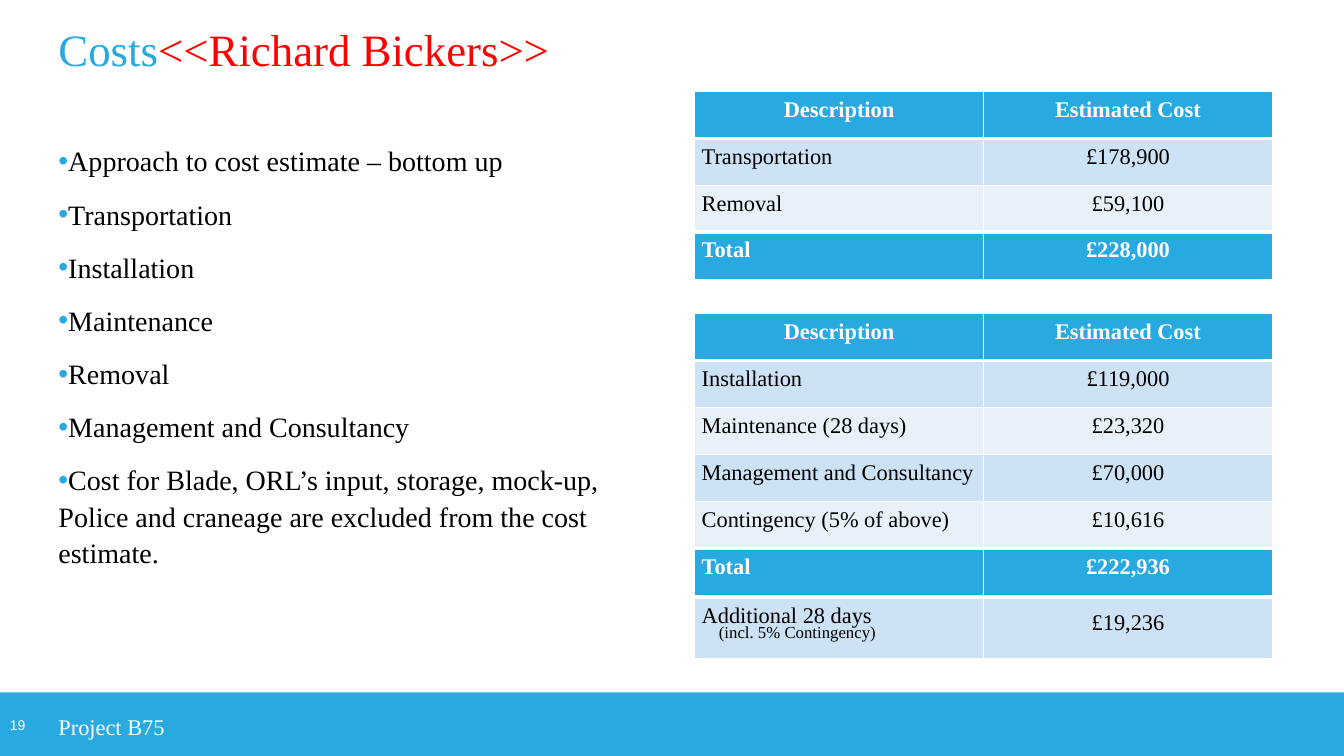
import dataclasses

import lxml.etree
import pptx
import pptx.dml.color
import pptx.enum.shapes
import pptx.enum.text
import pptx.oxml.ns
import pptx.util

PX = 9144
ALIGN = pptx.enum.text.PP_ALIGN
ANCHOR = pptx.enum.text.MSO_ANCHOR


@dataclasses.dataclass(frozen=True)
class Theme:
    """Hold the colours, fonts and type sizes."""
    blue: str = "28AAE1"
    white: str = "FFFFFF"
    black: str = "000000"
    red: str = "FF0000"
    bands: tuple = ("CDE2F4", "E8F1F9")
    serif: str = "Times New Roman"
    sans: str = "Arial"
    title: int = 32
    body: int = 20
    cell: int = 16
    note: int = 12
    page: int = 10


THEME = Theme()
POINTS = ("Approach to cost estimate – bottom up", "Transportation", "Installation",
          "Maintenance", "Removal", "Management and Consultancy",
          "Cost for Blade, ORL’s input, storage, mock-up, Police and craneage "
          "are excluded from the cost estimate.")
HEAD = ("Description", "Estimated Cost")
MOVES = (HEAD, ("Transportation", "£178,900"), ("Removal", "£59,100"), ("Total", "£228,000"))
WORKS = (HEAD, ("Installation", "£119,000"), ("Maintenance (28 days)", "£23,320"),
         ("Management and Consultancy", "£70,000"), ("Contingency (5% of above)", "£10,616"),
         ("Total", "£222,936"))
EXTRA = (("Additional 28 days", "£19,236"),)


def emu(box):
    """Turn px lengths into EMU."""
    return [pptx.util.Emu(n * PX) for n in box]


def rgb(code):
    """Return a colour from its hex code."""
    return pptx.dml.color.RGBColor.from_string(code)


def node(parent, tag, **attrs):
    """Add an XML child with attributes."""
    return lxml.etree.SubElement(parent, pptx.oxml.ns.qn(tag), attrs)


def write(para, text, size, color, face=THEME.serif, bold=False):
    """Add one run to a paragraph."""
    run = para.add_run()
    run.text = text
    run.font.size = pptx.util.Pt(size)
    run.font.name = face
    run.font.bold = bold
    run.font.color.rgb = rgb(color)


def space(para, line, before=0, after=0):
    """Set the line pitch and paragraph gaps in points."""
    para.line_spacing = pptx.util.Pt(line)
    para.space_before = pptx.util.Pt(before)
    para.space_after = pptx.util.Pt(after)


def frame(slide, box, inset=(0, 0, 0, 0), anchor=ANCHOR.TOP):
    """Add a wrapping text box and return its frame."""
    text = slide.shapes.add_textbox(*emu(box)).text_frame
    text.word_wrap = True
    text.vertical_anchor = anchor
    (text.margin_left, text.margin_top,
     text.margin_right, text.margin_bottom) = emu(inset)
    return text


def title(slide, box):
    """Place the two-colour title."""
    para = frame(slide, box).paragraphs[0]
    space(para, 34)
    write(para, "Costs", THEME.title, THEME.blue)
    write(para, "<<Richard Bickers>>", THEME.title, THEME.red)


def points(slide, box):
    """Place the bulleted list."""
    text = frame(slide, box)
    for i, point in enumerate(POINTS):
        para = text.add_paragraph() if i else text.paragraphs[0]
        space(para, 26, 12)
        props = para._p.get_or_add_pPr()
        props.set("marL", "0")
        props.set("indent", str(-26 * PX))
        node(node(props, "a:buClr"), "a:srgbClr", val=THEME.blue)
        node(props, "a:buFont", typeface=THEME.sans)
        node(props, "a:buChar", char="•")
        write(para, point, THEME.body, THEME.black)


def footer(slide, box):
    """Place the band with page number and project name."""
    left, top, width, height = box
    band = slide.shapes.add_shape(pptx.enum.shapes.MSO_SHAPE.RECTANGLE, *emu(box))
    band.shadow.inherit = False
    band.fill.solid()
    band.fill.fore_color.rgb = rgb(THEME.blue)
    band.line.fill.background()
    page = frame(slide, (left, top + 19, 58, 27), (10, 5, 10, 5))
    write(page.paragraphs[0], "19", THEME.page, THEME.white, THEME.sans)
    name = frame(slide, (left + 58, top - 3, 987, height + 3), (0, 10, 0, 0), ANCHOR.MIDDLE)
    space(name.paragraphs[0], 18)
    write(name.paragraphs[0], "Project B75", THEME.cell, THEME.white)


def paint(cell, fill, top, bottom):
    """Give a cell its borders and fill."""
    props = cell._tc.get_or_add_tcPr()
    for side, width in (("L", 1), ("R", 1), ("T", top), ("B", bottom)):
        line = node(props, "a:ln" + side, w=str(pptx.util.Pt(width)))
        node(node(line, "a:solidFill"), "a:srgbClr", val=THEME.white)
    cell.fill.solid()
    cell.fill.fore_color.rgb = rgb(fill)
    cell.vertical_anchor = ANCHOR.MIDDLE
    (cell.margin_left, cell.margin_top,
     cell.margin_right, cell.margin_bottom) = emu((7, 0, 7, 0))


def costs(slide, box, rows):
    """Place a cost table with even rows and return it."""
    table = slide.shapes.add_table(len(rows), 2, *emu(box)).table
    table.first_row = table.horz_banding = False
    for col in table.columns:
        col.width = pptx.util.Emu(box[2] * PX // 2)
    strong = [row == HEAD or row[0] == "Total" for row in rows]
    for r, row in enumerate(rows):
        table.rows[r].height = pptx.util.Emu(box[3] * PX // len(rows))
        fill = THEME.blue if strong[r] else THEME.bands[(r + 1) % 2 if len(rows) > 1 else 0]
        top = 3 if r and strong[r] != strong[r - 1] else 1
        bottom = 3 if r + 1 < len(rows) and strong[r] != strong[r + 1] else 1
        for c, text in enumerate(row):
            cell = table.cell(r, c)
            paint(cell, fill, top, bottom)
            para = cell.text_frame.paragraphs[0]
            para.alignment = ALIGN.CENTER if c or row == HEAD else ALIGN.LEFT
            space(para, 10, 2.9, 2.9)
            color = THEME.white if strong[r] else THEME.black
            write(para, text, THEME.cell, color, bold=strong[r])
    return table


def extra(slide, box):
    """Place the one-row table with its small note."""
    text = costs(slide, box, EXTRA).cell(0, 0).text_frame
    space(text.paragraphs[0], 10, 2.9)
    note = text.add_paragraph()
    space(note, 10, 0, 2.9)
    note._p.get_or_add_pPr().set("marL", str(17 * PX))
    write(note, "(incl. 5% Contingency)", THEME.note, THEME.black)


def main():
    """Build and save the slide."""
    deck = pptx.Presentation()
    deck.slide_width, deck.slide_height = emu((1333, 750))
    slide = deck.slides.add_slide(deck.slide_layouts[6])
    footer(slide, (0, 687, 1333, 63))
    points(slide, (58, 140, 556, 438))
    title(slide, (58, 28, 1204, 64))
    costs(slide, (689, 311, 573, 280), WORKS)
    costs(slide, (689, 91, 573, 186), MOVES)
    extra(slide, (689, 594, 573, 59))
    deck.save("out.pptx")


if __name__ == "__main__":
    main()
